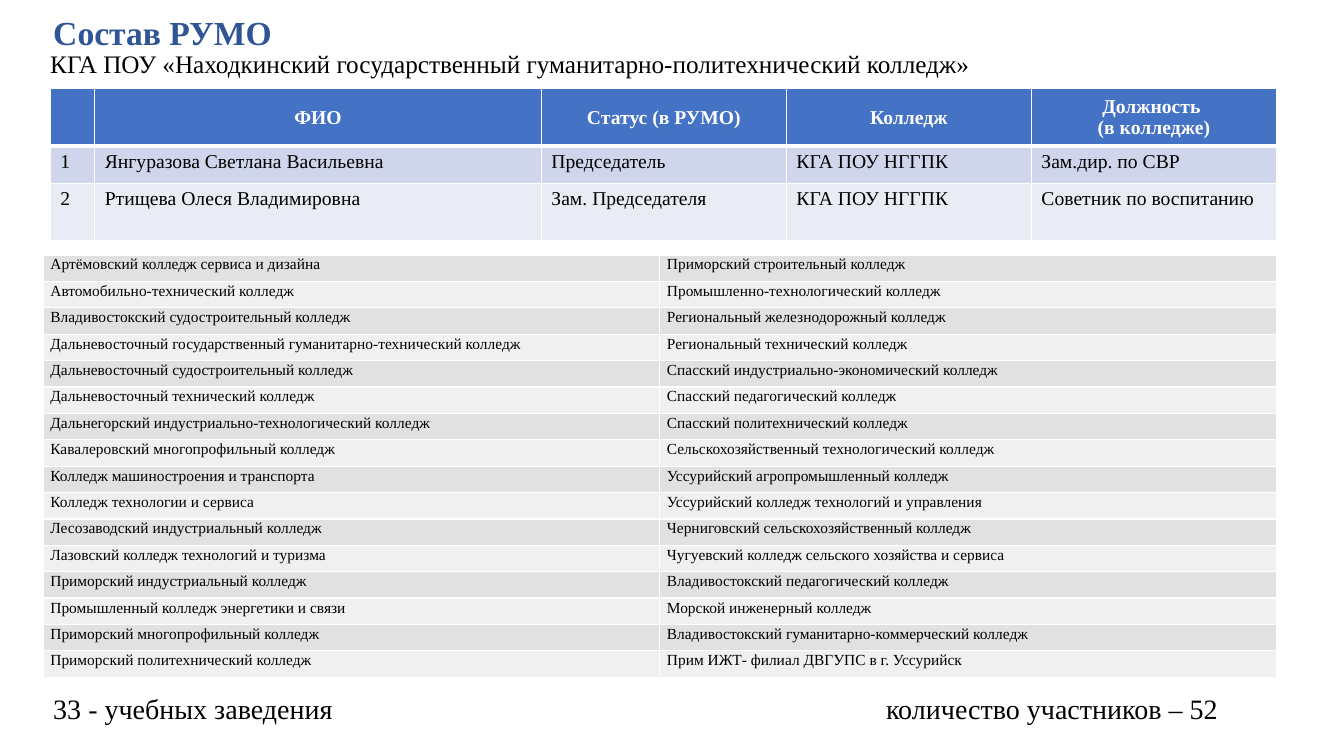
from lxml.etree import SubElement
from pptx import Presentation
from pptx.dml.color import RGBColor
from pptx.enum.text import MSO_ANCHOR, MSO_AUTO_SIZE, PP_ALIGN
from pptx.oxml import parse_xml
from pptx.oxml.ns import nsdecls, qn
from pptx.util import Inches, Pt

FONT = "Times New Roman"
WHITE, BLACK = "FFFFFF", "000000"
HEADER_FILL, LEADER_FILLS = "4472C4", ("CFD5EA", "E9EBF5")
COLLEGE_FILLS = ("E1E1E1", "F0F0F0")

LEADER_COLUMNS = (0.44, 4.43, 2.43, 2.43, 2.43)
LEADER_ROWS = (0.57, 0.37, 0.57)
LEADERS = (
    ("", "ФИО", "Статус (в РУМО)", "Колледж", "Должность \n(в колледже)"),
    ("1", "Янгуразова Светлана Васильевна", "Председатель", "КГА ПОУ НГГПК", "Зам.дир. по СВР"),
    ("2", "Ртищева Олеся Владимировна", "Зам. Председателя", "КГА ПОУ НГГПК",
     "Советник по воспитанию"),
)
COLLEGES = (
    ("Артёмовский колледж сервиса и дизайна", "Приморский строительный колледж"),
    ("Автомобильно-технический колледж", "Промышленно-технологический колледж"),
    ("Владивостокский судостроительный колледж", "Региональный железнодорожный колледж"),
    ("Дальневосточный государственный гуманитарно-технический колледж",
     "Региональный технический колледж"),
    ("Дальневосточный судостроительный колледж", "Спасский индустриально-экономический колледж"),
    ("Дальневосточный технический колледж", "Спасский педагогический колледж"),
    ("Дальнегорский индустриально-технологический колледж", "Спасский политехнический колледж"),
    ("Кавалеровский многопрофильный колледж", "Сельскохозяйственный технологический колледж"),
    ("Колледж машиностроения и транспорта", "Уссурийский агропромышленный колледж"),
    ("Колледж технологии и сервиса", "Уссурийский колледж технологий и управления"),
    ("Лесозаводский индустриальный колледж", "Черниговский сельскохозяйственный колледж"),
    ("Лазовский колледж технологий и туризма", "Чугуевский колледж сельского хозяйства и сервиса"),
    ("Приморский индустриальный колледж", "Владивостокский педагогический колледж"),
    ("Промышленный колледж энергетики и связи", "Морской инженерный колледж"),
    ("Приморский многопрофильный колледж", "Владивостокский гуманитарно-коммерческий колледж"),
    ("Приморский политехнический колледж", "Прим ИЖТ- филиал ДВГУПС в г. Уссурийск"),
)


def paint(target, color):
    """Give a fill or a font the colour of a hex string."""
    if hasattr(target, "solid"):
        target.solid()
        target = target.fore_color
    else:
        target = target.color
    target.rgb = RGBColor.from_string(color)


def write(frame, text, size, color=BLACK, bold=False):
    """Set the text of a frame and format its runs."""
    frame.text = text
    for paragraph in frame.paragraphs:
        for run in paragraph.runs:
            run.font.name, run.font.size, run.font.bold = FONT, Pt(size), bold
            paint(run.font, color)


def add_line(slide, box, text, size, color=BLACK, bold=False):
    """Place a line of text in its box and return its paragraph."""
    frame = slide.shapes.add_textbox(*map(Inches, box)).text_frame
    frame.word_wrap = True
    frame.auto_size = MSO_AUTO_SIZE.SHAPE_TO_FIT_TEXT
    write(frame, text, size, color, bold)
    return frame.paragraphs[0]


def add_borders(cell, bottom):
    """Draw white borders around a cell with the given bottom width."""
    for index, (side, width) in enumerate(zip("LRTB", (1, 1, 1, bottom))):
        cell._tc.get_or_add_tcPr().insert(index, parse_xml(
            f'<a:ln{side} {nsdecls("a")} w="{Pt(width)}"><a:solidFill>'
            f'<a:srgbClr val="{WHITE}"/></a:solidFill></a:ln{side}>'))


def add_grid(slide, box, columns, rows):
    """Place an empty table with the given column widths and row heights."""
    table = slide.shapes.add_table(len(rows), len(columns), *map(Inches, box)).table
    for column, width in zip(table.columns, columns):
        column.width = Inches(width)
    for row, height in zip(table.rows, rows):
        row.height = Inches(height)
    return table


def add_leaders(slide, box):
    """Place the table of the chair and the deputy in its box."""
    table = add_grid(slide, box, LEADER_COLUMNS, LEADER_ROWS)
    for r, person in enumerate(LEADERS):
        header = r == 0
        for c, text in enumerate(person):
            cell = table.cell(r, c)
            write(cell.text_frame, text, 14, WHITE if header else BLACK, header)
            paint(cell.fill, HEADER_FILL if header else LEADER_FILLS[r - 1])
            add_borders(cell, 3 if header else 1)
            if header:
                cell.vertical_anchor = MSO_ANCHOR.MIDDLE
                for paragraph in cell.text_frame.paragraphs:
                    paragraph.alignment = PP_ALIGN.CENTER


def add_colleges(slide, box):
    """Place the two-column list of colleges in its box."""
    width, height = box[2:]
    count = len(COLLEGES)
    table = add_grid(slide, box, [width / 2] * 2, [height / count] * count)
    table.first_row = False
    for r, pair in enumerate(COLLEGES):
        for c, college in enumerate(pair):
            cell = table.cell(r, c)
            cell.margin_left = cell.margin_right = Inches(0.07)
            cell.margin_top = cell.margin_bottom = 0
            write(cell.text_frame, college, 11)
            paragraph = cell.text_frame.paragraphs[0]
            paragraph.line_spacing, paragraph.space_after = 1.07, Pt(8)
            paint(cell.fill, COLLEGE_FILLS[r % 2])
            add_borders(cell, 1)


def add_totals(slide, box):
    """Place the line of totals, its second part set at a tab stop."""
    totals = add_line(slide, box, "33 - учебных заведения\tколичество участников – 52", 20)
    stops = SubElement(totals._p.get_or_add_pPr(), qn("a:tabLst"))
    SubElement(stops, qn("a:tab"), pos=str(Inches(8.26)), algn="l")


def main():
    """Build the slide and save it."""
    deck = Presentation()
    deck.slide_width, deck.slide_height = Inches(13.33), Inches(7.5)
    slide = deck.slides.add_slide(deck.slide_layouts[6])
    add_line(slide, (0.43, 0.07, 12.5, 0.5), "Состав РУМО", 24, "2F5597", True)
    add_leaders(slide, (0.5, 0.88, 12.16, 1.51))
    add_line(slide, (0.4, 0.43, 12.26, 0.4),
             "КГА ПОУ «Находкинский государственный гуманитарно-политехнический колледж»", 18)
    add_colleges(slide, (0.43, 2.53, 12.23, 4.19))
    add_totals(slide, (0.43, 6.81, 12.23, 0.44))
    deck.save("out.pptx")


if __name__ == "__main__":
    main()
